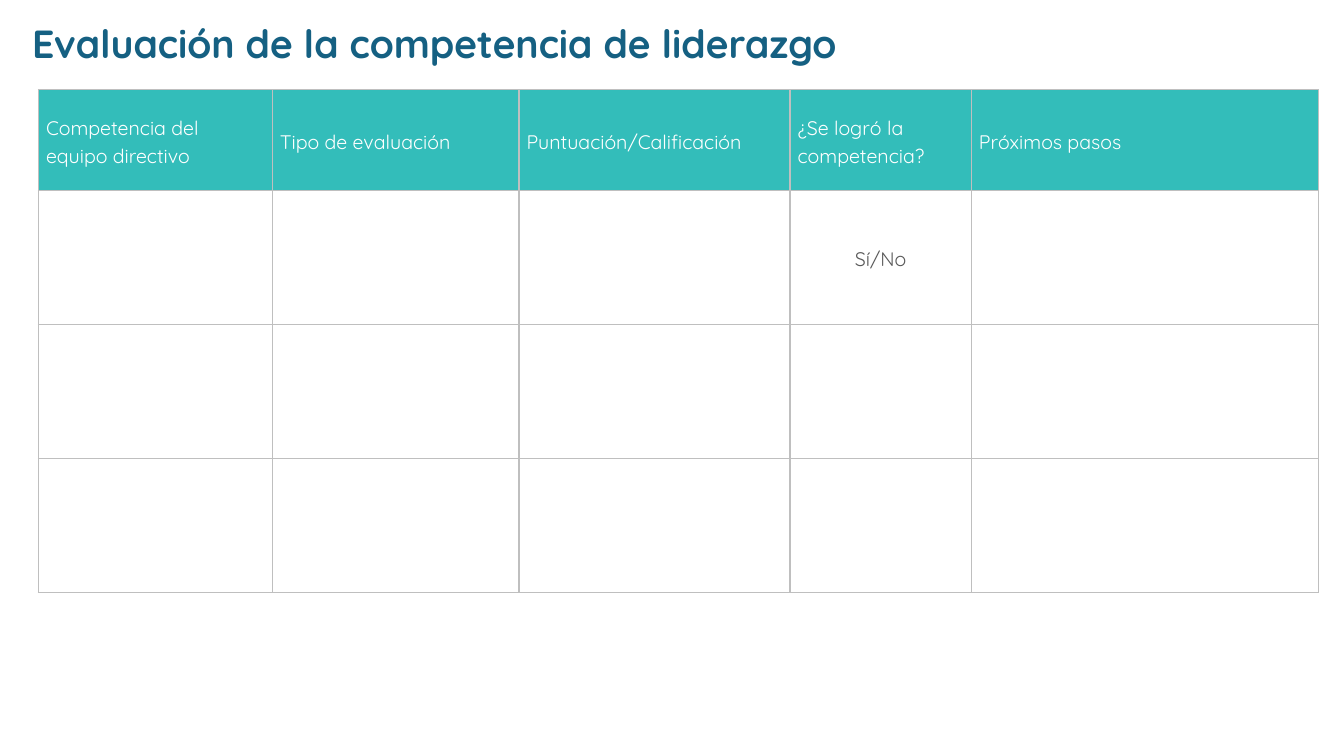
from lxml import etree
from pptx import Presentation
from pptx.dml.color import RGBColor
from pptx.enum.text import MSO_ANCHOR, PP_ALIGN
from pptx.oxml.ns import qn
from pptx.util import Cm, Pt

LEFT, CENTER = PP_ALIGN.LEFT, PP_ALIGN.CENTER
MIDDLE = MSO_ANCHOR.MIDDLE

TITLE = "Evaluación de la competencia de liderazgo"
HEADS = [
    "Competencia del equipo directivo",
    "Tipo de evaluación",
    "Puntuación/Calificación",
    "¿Se logró la competencia?",
    "Próximos pasos",
]
ROWS = [
    HEADS,
    ["", "", "", "Sí/No", ""],
    [""] * len(HEADS),
    [""] * len(HEADS),
]
WIDTHS = [5.89, 6.22, 6.83, 4.57, 8.74]
HEIGHTS = [2.54] + [3.38] * 3

THEME = {
    "font": "Quicksand",
    "title": "156082",
    "head": "33BDBA",
    "light": "FFFFFF",
    "body": "595959",
    "rule": "BFBFBF",
    "big": 28,
    "small": 14,
}


def write(frame, text, size, color, bold=False, align=LEFT, line=1.0, after=0):
    para = frame.paragraphs[0]
    para.alignment = align
    para.line_spacing = line
    para.space_after = Pt(after)
    run = para.add_run()
    run.text = text
    font = run.font
    font.name = THEME["font"]
    font.size = Pt(size)
    font.bold = bold
    font.color.rgb = RGBColor.from_string(color)


def frame_cell(cell):
    props = cell._tc.get_or_add_tcPr()
    for side in ("lnL", "lnR", "lnT", "lnB"):
        edge = etree.SubElement(props, qn("a:" + side), w=str(Pt(1)))
        fill = etree.SubElement(edge, qn("a:solidFill"))
        etree.SubElement(fill, qn("a:srgbClr"), val=THEME["rule"])


def add_title(slide):
    box = slide.shapes.add_textbox(Cm(0.56), Cm(0.36), Cm(26.52), Cm(1.45))
    box.text_frame.word_wrap = True
    write(box.text_frame, TITLE, THEME["big"], THEME["title"], bold=True)


def add_grid(slide):
    grid = slide.shapes.add_table(
        len(ROWS), len(HEADS), Cm(0.97), Cm(2.26),
        Cm(sum(WIDTHS)), Cm(sum(HEIGHTS)),
    ).table
    grid.horz_banding = False
    grid.first_row = False
    for col, width in zip(grid.columns, WIDTHS):
        col.width = Cm(width)
    for row, height in zip(grid.rows, HEIGHTS):
        row.height = Cm(height)
    for r, row in enumerate(ROWS):
        for c, text in enumerate(row):
            cell = grid.cell(r, c)
            cell.vertical_anchor = MIDDLE
            cell.margin_left = cell.margin_right = Cm(0.19)
            cell.margin_top = cell.margin_bottom = 0
            frame_cell(cell)
            head = r == 0
            if head:
                cell.fill.solid()
                cell.fill.fore_color.rgb = RGBColor.from_string(THEME["head"])
            else:
                cell.fill.background()
            if text:
                write(
                    cell.text_frame, text, THEME["small"],
                    THEME["light" if head else "body"],
                    align=LEFT if head else CENTER, line=1.15, after=8,
                )


def main():
    deck = Presentation()
    deck.slide_width, deck.slide_height = Cm(33.87), Cm(19.05)
    slide = deck.slides.add_slide(deck.slide_layouts[6])
    add_title(slide)
    add_grid(slide)
    deck.save("out.pptx")


if __name__ == "__main__":
    main()
